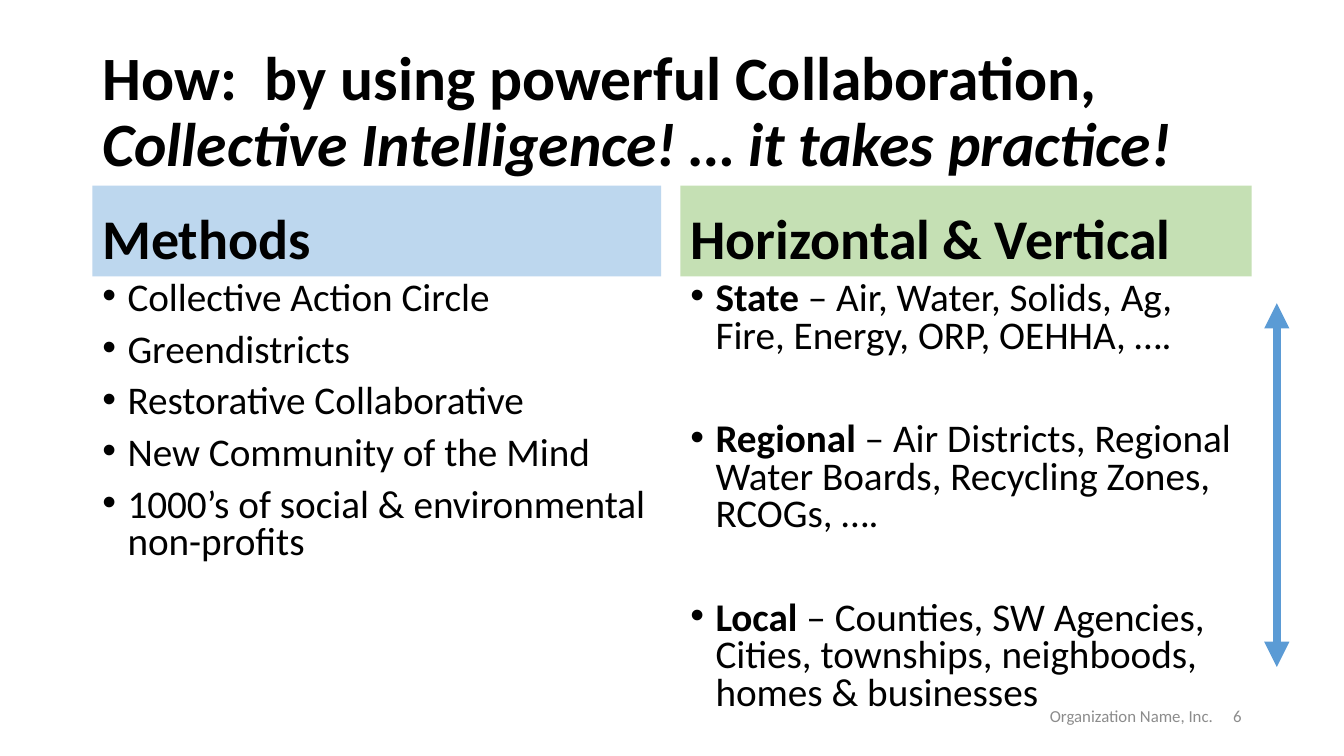
from dataclasses import dataclass

from lxml.etree import SubElement
from pptx import Presentation
from pptx.dml.color import RGBColor
from pptx.enum.shapes import MSO_CONNECTOR, MSO_SHAPE
from pptx.enum.text import MSO_ANCHOR, PP_ALIGN
from pptx.oxml.ns import qn
from pptx.util import Inches, Pt


@dataclass(frozen=True)
class Theme:
    """Colours, type sizes and spacing of the slide."""
    font: str = "Calibri"
    ink: str = "000000"
    muted: str = "8C8C8C"
    blue: str = "BDD7EE"
    green: str = "C5E0B4"
    arrow: str = "5B9BD5"
    title_size: int = 44
    heading_size: int = 40
    body_size: int = 28
    footer_size: int = 12
    arrow_width: int = 6
    gap: int = 10
    wide_gap: int = 47


THEME = Theme()
GRID_COLUMNS = 160
GRID_ROWS = 90
SLIDE_WIDTH = Inches(13.33)
SLIDE_HEIGHT = Inches(7.5)

LEFT_COLUMN = (11, 67.7)
RIGHT_COLUMN = (81, 68)
HEADING_ROWS = (22.1, 10.8)
BODY_ROWS = (32.9, 52.3)
FOOTER_ROWS = (82.8, 4.8)

TITLE = [("How:  by using powerful Collaboration, ", False),
         ("Collective Intelligence! … it takes practice!", True)]
METHODS = [
    [("Collective Action Circle", False)],
    [("Greendistricts", False)],
    [("Restorative Collaborative", False)],
    [("New Community of the Mind", False)],
    [("1000’s of social & environmental non-profits", False)],
]
LEVELS = [
    [("State", True), (" – Air, Water, Solids, Ag, Fire, Energy, ORP, OEHHA, ….", False)],
    [("Regional ", True),
     ("– Air Districts, Regional Water Boards, Recycling Zones, RCOGs, ….", False)],
    [("Local", True),
     (" – Counties, SW Agencies, Cities, townships, neighboods, homes & businesses", False)],
]


def across(columns):
    """Turn grid columns into a slide length."""
    return round(SLIDE_WIDTH * columns / GRID_COLUMNS)


def down(rows):
    """Turn grid rows into a slide length."""
    return round(SLIDE_HEIGHT * rows / GRID_ROWS)


def place(columns, rows):
    """Return left, top, width and height of a grid area."""
    return across(columns[0]), down(rows[0]), across(columns[1]), down(rows[1])


def style(paragraph, size, color=THEME.ink, bold=False, spacing=0.9):
    """Set the font and line spacing of a paragraph."""
    font = paragraph.font
    font.name, font.size, font.bold = THEME.font, Pt(size), bold
    font.color.rgb = RGBColor.from_string(color)
    paragraph.line_spacing = spacing


def add_text_frame(slide, columns, rows, anchor):
    """Add a wrapping text box and return its text frame."""
    frame = slide.shapes.add_textbox(*place(columns, rows)).text_frame
    frame.word_wrap = True
    frame.vertical_anchor = anchor
    return frame


def add_title(slide):
    """Add the two-part slide title."""
    frame = add_text_frame(slide, (11, 138), (4.8, 17.4), MSO_ANCHOR.MIDDLE)
    paragraph = frame.paragraphs[0]
    style(paragraph, THEME.title_size, bold=True)
    for text, italic in TITLE:
        run = paragraph.add_run()
        run.text = text
        if italic:
            run.font.italic = True


def add_heading(slide, columns, text, color):
    """Add a coloured column heading."""
    shape = slide.shapes.add_shape(MSO_SHAPE.RECTANGLE, *place(columns, HEADING_ROWS))
    shape.shadow.inherit = False
    shape.fill.solid()
    shape.fill.fore_color.rgb = RGBColor.from_string(color)
    shape.line.fill.background()
    frame = shape.text_frame
    frame.word_wrap = True
    frame.vertical_anchor = MSO_ANCHOR.BOTTOM
    paragraph = frame.paragraphs[0]
    paragraph.text = text
    paragraph.alignment = PP_ALIGN.LEFT
    style(paragraph, THEME.heading_size, bold=True)


def add_bullet(paragraph):
    """Give a paragraph a hanging bullet."""
    properties = paragraph._p.get_or_add_pPr()
    properties.set("marL", str(Inches(0.25)))
    properties.set("indent", str(-Inches(0.25)))
    SubElement(properties, qn("a:buFont")).set("typeface", "Arial")
    SubElement(properties, qn("a:buChar")).set("char", "•")


def add_bullets(slide, columns, items, gap):
    """Add a bulleted list whose items are lists of text and bold pairs."""
    frame = add_text_frame(slide, columns, BODY_ROWS, MSO_ANCHOR.TOP)
    for index, item in enumerate(items):
        paragraph = frame.add_paragraph() if index else frame.paragraphs[0]
        style(paragraph, THEME.body_size, spacing=0.8)
        paragraph.space_before = Pt(gap if index else THEME.gap)
        for text, bold in item:
            run = paragraph.add_run()
            run.text = text
            if bold:
                run.font.bold = True
        properties = paragraph._p.get_or_add_pPr()
        default_font = properties.find(qn("a:defRPr"))
        add_bullet(paragraph)
        if default_font is not None:
            properties.append(default_font)


def add_footer(slide, columns, text):
    """Add a right-aligned footer text."""
    paragraph = add_text_frame(slide, columns, FOOTER_ROWS, MSO_ANCHOR.MIDDLE).paragraphs[0]
    paragraph.text = text
    paragraph.alignment = PP_ALIGN.RIGHT
    style(paragraph, THEME.footer_size, THEME.muted, spacing=1.0)


def add_double_arrow(slide, column, top, bottom):
    """Add a vertical line with an arrowhead at each end."""
    connector = slide.shapes.add_connector(
        MSO_CONNECTOR.STRAIGHT, across(column), down(top), across(column), down(bottom))
    connector.line.color.rgb = RGBColor.from_string(THEME.arrow)
    connector.line.width = Pt(THEME.arrow_width)
    line = connector.line._get_or_add_ln()
    for end in ("a:headEnd", "a:tailEnd"):
        SubElement(line, qn(end)).set("type", "triangle")
    SubElement(connector._element.spPr, qn("a:effectLst"))


def main():
    """Build the slide and save it."""
    presentation = Presentation()
    presentation.slide_width, presentation.slide_height = SLIDE_WIDTH, SLIDE_HEIGHT
    slide = presentation.slides.add_slide(presentation.slide_layouts[6])
    add_footer(slide, (109, 36.6), "Organization Name, Inc.")
    add_footer(slide, (143, 6), "6")
    add_title(slide)
    add_heading(slide, LEFT_COLUMN, "Methods", THEME.blue)
    add_bullets(slide, LEFT_COLUMN, METHODS, THEME.gap)
    add_heading(slide, RIGHT_COLUMN, "Horizontal & Vertical", THEME.green)
    add_bullets(slide, RIGHT_COLUMN, LEVELS, THEME.wide_gap)
    add_double_arrow(slide, 152, 36.1, 79.4)
    presentation.save("out.pptx")


if __name__ == "__main__":
    main()
